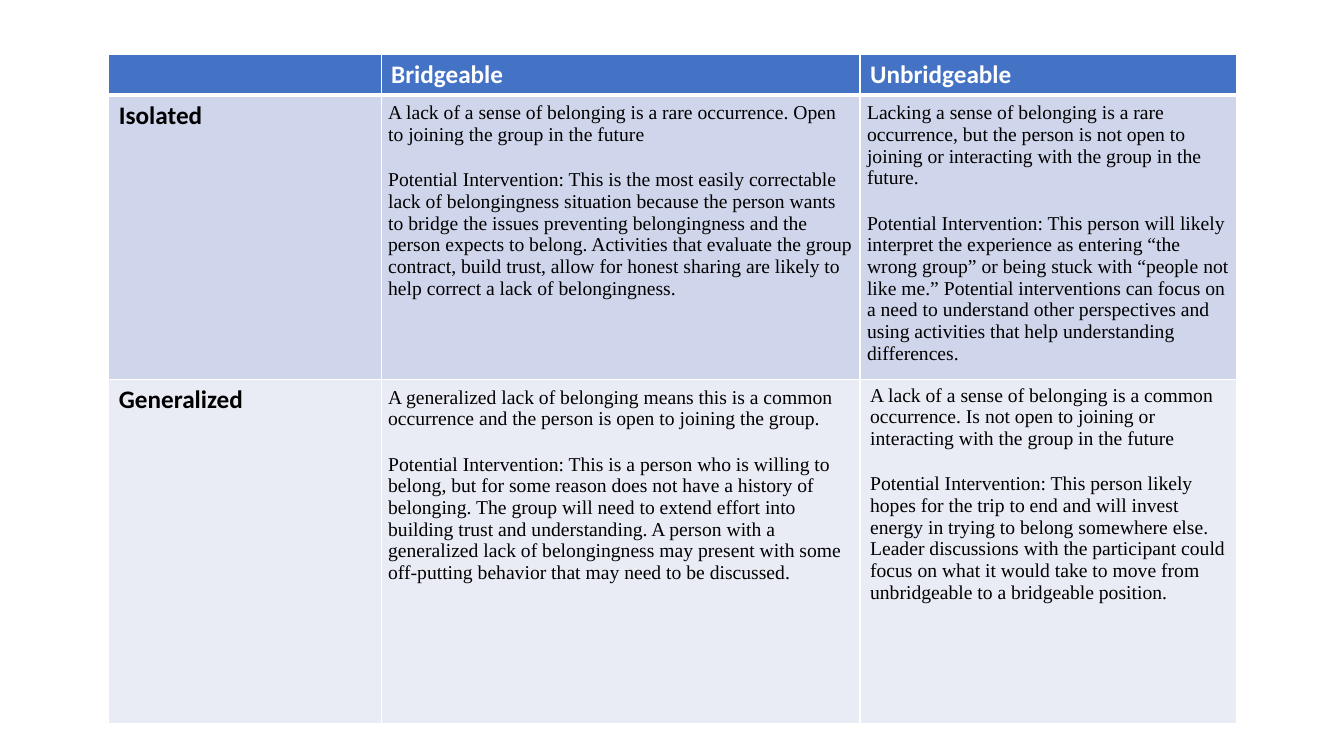
from dataclasses import dataclass

from lxml.etree import SubElement
from pptx import Presentation
from pptx.dml.color import RGBColor as RGB
from pptx.oxml import parse_xml
from pptx.oxml.ns import nsdecls
from pptx.util import Inches, Pt


@dataclass(frozen=True)
class Theme:
    header: str = "4472C4"
    bands: tuple = ("CFD5EA", "E9EBF5")
    white: str = "FFFFFF"
    ink: str = "000000"
    label_font: str = "Calibri"
    body_font: str = "Times New Roman"
    label_size: int = 18
    body_size: int = 14
    body_gap: int = 17
    rule: int = 1
    header_rule: int = 3


THEME = Theme()
TABLE_BOX = (1.08, 0.54, 11.18, 6.62)
COL_WIDTHS = (2.7, 4.75, 3.73)
ROW_HEIGHTS = (0.39, 2.82, 3.41)
TIGHT, NORMAL = (0.07, 0.07), (0.1, 0.05)

HEADINGS = ("", "Bridgeable", "Unbridgeable")
# Row label, then one (margins, description, intervention) per column
TYPES = (
    ("Isolated", (
        (TIGHT,
         "A lack of a sense of belonging is a rare occurrence. Open to joining "
         "the group in the future",
         "Potential Intervention: This is the most easily correctable lack of "
         "belongingness situation because the person wants to bridge the issues "
         "preventing belongingness and the person expects to belong. Activities "
         "that evaluate the group contract, build trust, allow for honest sharing "
         "are likely to help correct a lack of belongingness."),
        (TIGHT,
         "Lacking a sense of belonging is a rare occurrence, but the person is "
         "not open to joining or interacting with the group in the future.",
         "Potential Intervention: This person will likely interpret the "
         "experience as entering “the wrong group” or being stuck with “people "
         "not like me.” Potential interventions can focus on a need to understand "
         "other perspectives and using activities that help understanding "
         "differences."),
    )),
    ("Generalized", (
        (TIGHT,
         "A generalized lack of belonging means this is a common occurrence and "
         "the person is open to joining the group.",
         "Potential Intervention: This is a person who is willing to belong, but "
         "for some reason does not have a history of belonging. The group will "
         "need to extend effort into building trust and understanding. A person "
         "with a generalized lack of belongingness may present with some "
         "off-putting behavior that may need to be discussed."),
        (NORMAL,
         "A lack of a sense of belonging is a common occurrence. Is not open to "
         "joining or interacting with the group in the future",
         "Potential Intervention: This person likely hopes for the trip to end "
         "and will invest energy in trying to belong somewhere else. Leader "
         "discussions with the participant could focus on what it would take to "
         "move from unbridgeable to a bridgeable position."),
    )),
)


def style_cell(cell, fill, margins=NORMAL, top=THEME.rule, bottom=THEME.rule):
    """Set the fill, margins and white borders of a cell."""
    cell.margin_left = cell.margin_right = Inches(margins[0])
    cell.margin_top = cell.margin_bottom = Inches(margins[1])
    cell.fill.solid()
    cell.fill.fore_color.rgb = RGB.from_string(fill)
    tc_pr = cell._tc.get_or_add_tcPr()
    widths = {"L": THEME.rule, "R": THEME.rule, "T": top, "B": bottom}
    for i, (side, width) in enumerate(widths.items()):
        tc_pr.insert(i, parse_xml(
            f'<a:ln{side} {nsdecls("a")} w="{Pt(width)}"><a:solidFill>'
            f'<a:srgbClr val="{THEME.white}"/></a:solidFill></a:ln{side}>'))


def add_run(p, text, font, size, color, bold):
    r = p.add_run()
    r.text = text
    r.font.name, r.font.size, r.font.bold = font, Pt(size), bold
    r.font.color.rgb = RGB.from_string(color)


def add_label(cell, text, color):
    if text:
        add_run(cell.text_frame.paragraphs[0], text, THEME.label_font,
                THEME.label_size, color, True)


def add_body(cell, *texts):
    tf = cell.text_frame
    for i, text in enumerate(texts):
        p = tf.add_paragraph() if i else tf.paragraphs[0]
        if i:
            p.space_before = Pt(THEME.body_gap)
        add_run(p, text, THEME.body_font, THEME.body_size, THEME.ink, False)


def add_belonging_table(s, box):
    x, y, w, h = box
    table = s.shapes.add_table(len(ROW_HEIGHTS), len(COL_WIDTHS), Inches(x),
                               Inches(y), Inches(w), Inches(h)).table
    for col, width in zip(table.columns, COL_WIDTHS):
        col.width = Inches(width * w / sum(COL_WIDTHS))
    for row, height in zip(table.rows, ROW_HEIGHTS):
        row.height = Inches(height * h / sum(ROW_HEIGHTS))

    # Header row
    for c, heading in enumerate(HEADINGS):
        cell = table.cell(0, c)
        style_cell(cell, THEME.header, bottom=THEME.header_rule)
        add_label(cell, heading, THEME.white)

    # One band for each type of lack of belonging
    for i, (label, entries) in enumerate(TYPES):
        fill = THEME.bands[i]
        top = THEME.rule if i else THEME.header_rule
        style_cell(table.cell(i + 1, 0), fill, top=top)
        add_label(table.cell(i + 1, 0), label, THEME.ink)
        for c, (margins, *texts) in enumerate(entries, 1):
            cell = table.cell(i + 1, c)
            style_cell(cell, fill, margins, top)
            add_body(cell, *texts)


def main():
    prs = Presentation()
    prs.slide_width, prs.slide_height = Inches(13.33), Inches(7.5)
    s = prs.slides.add_slide(prs.slide_layouts[6])
    add_belonging_table(s, TABLE_BOX)
    prs.save("out.pptx")


if __name__ == "__main__":
    main()
